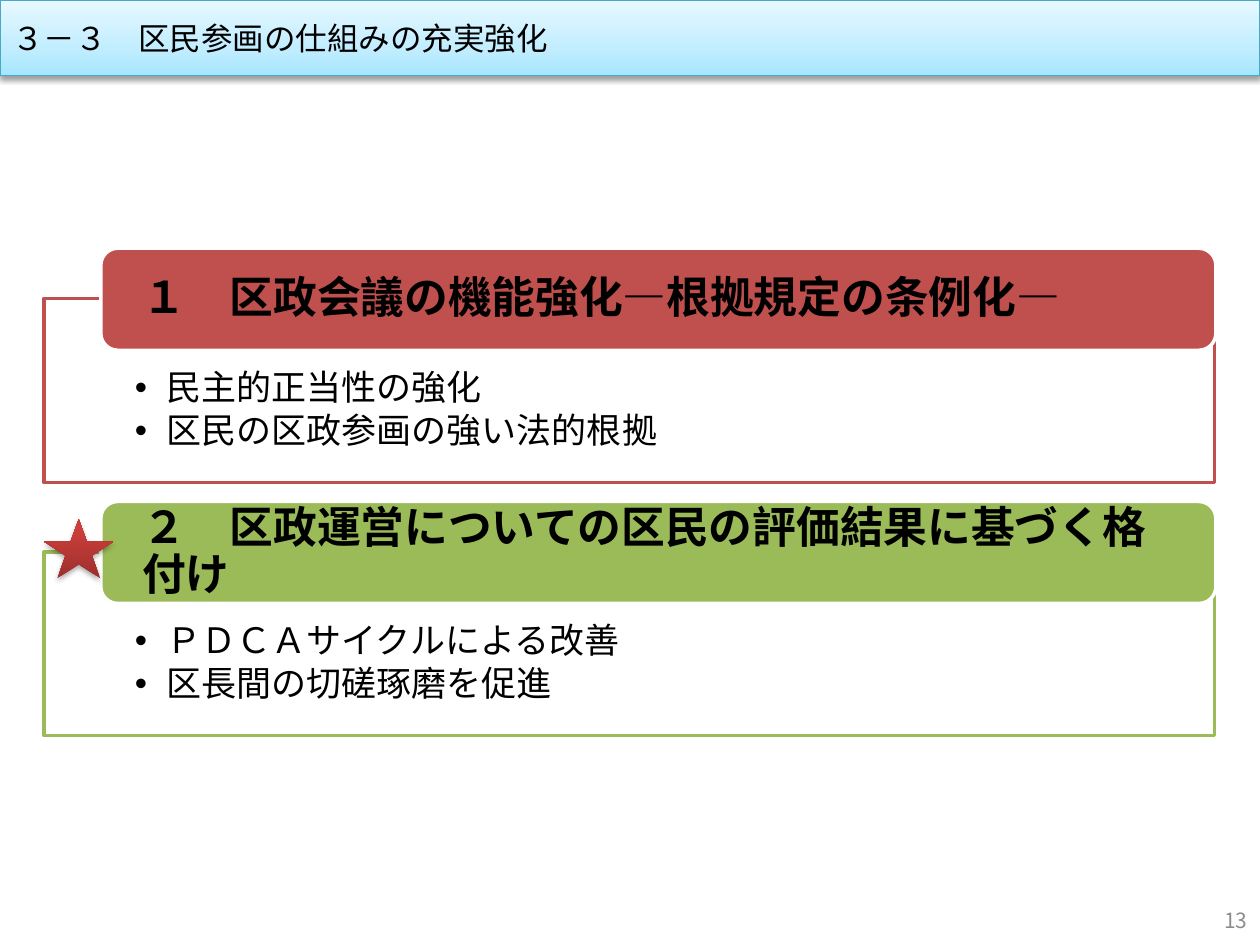
from lxml import etree
from pptx import Presentation
from pptx.dml.color import RGBColor
from pptx.enum.shapes import MSO_SHAPE
from pptx.enum.text import MSO_ANCHOR, PP_ALIGN
from pptx.oxml.ns import qn
from pptx.util import Inches, Pt

RECT, ROUND, STAR = MSO_SHAPE.RECTANGLE, MSO_SHAPE.ROUNDED_RECTANGLE, MSO_SHAPE.STAR_5_POINT
TOP, MIDDLE = MSO_ANCHOR.TOP, MSO_ANCHOR.MIDDLE
LEFT, RIGHT = PP_ALIGN.LEFT, PP_ALIGN.RIGHT
W, H = 10, 7.5
PANEL_X, PANEL_W, PANEL_H = 0.35, 9.29, 1.46
FIRST_Y, PITCH = 2.37, 2.01
BULLET_INDENT = 0.25
SECTIONS = [
    ("１　区政会議の機能強化―根拠規定の条例化―", "C0504D",
     ["民主的正当性の強化", "区民の区政参画の強い法的根拠"]),
    ("２　区政運営についての区民の評価結果に基づく格付け", "9BBB59",
     ["ＰＤＣＡサイクルによる改善", "区長間の切磋琢磨を促進"]),
]


def rgb(color):
    return RGBColor.from_string(color)


def sub(parent, tag, **attrs):
    return etree.SubElement(parent, qn(tag), {k: str(v) for k, v in attrs.items()})


def add_text(sp, lines, size, color="000000", font="Calibri", bold=False, align=LEFT,
             anchor=MIDDLE, insets=(0.1, 0.05, 0.1, 0.05), spacing=1, after=0, bullet=False):
    tf = sp.text_frame
    tf.word_wrap = True
    tf.vertical_anchor = anchor
    tf.margin_left, tf.margin_top, tf.margin_right, tf.margin_bottom = map(Inches, insets)
    for i, line in enumerate(lines):
        p = tf.add_paragraph() if i else tf.paragraphs[0]
        p.alignment, p.line_spacing, p.space_after = align, spacing, Pt(after)
        if bullet:
            pPr = p._p.get_or_add_pPr()
            pPr.set("marL", str(Inches(BULLET_INDENT)))
            pPr.set("indent", str(-Inches(BULLET_INDENT)))
            sub(pPr, "a:buFont", typeface="Arial")
            sub(pPr, "a:buChar", char="•")
        r = p.add_run()
        r.text = line
        r.font.size, r.font.name, r.font.bold = Pt(size), font, bold
        r.font.color.rgb = rgb(color)


def add_box(s, kind, box, fill=None, line=None, width=2, alpha=None):
    sp = s.shapes.add_shape(kind, *map(Inches, box))
    if fill:
        sp.fill.solid()
        sp.fill.fore_color.rgb = rgb(fill)
    if alpha:
        sub(sp.fill._xPr.find(".//" + qn("a:srgbClr")), "a:alpha", val=alpha * 1000)
    if line:
        sp.line.color.rgb = rgb(line)
        sp.line.width = Pt(width)
    else:
        sp.line.fill.background()
    sp.shadow.inherit = False
    return sp


def add_glossy(s, kind, box, stops, shadow_alpha, distance, **kw):
    """Shape with an upward gradient and a soft shadow below it."""
    sp = add_box(s, kind, box, **kw)
    sp.fill.gradient()
    sp.fill.gradient_angle = 90
    gs_list = sp._element.spPr.find(".//" + qn("a:gsLst"))
    for gs in list(gs_list):
        gs_list.remove(gs)
    for pos, color in stops:
        sub(sub(gs_list, "a:gs", pos=pos * 1000), "a:srgbClr", val=color)
    effects = sp._element.spPr.find(qn("a:effectLst"))
    shadow = sub(effects, "a:outerShdw", blurRad=Pt(3.1), dist=Pt(distance),
                 dir=90 * 60000, rotWithShape=0)
    sub(sub(shadow, "a:srgbClr", val="000000"), "a:alpha", val=shadow_alpha * 1000)
    return sp


def add_title(s, box, text):
    sp = add_glossy(s, RECT, box, [(0, "A7E6FF"), (35, "C1EDFF"), (100, "E7F8FF")],
                    38, 1.6, line="46AAC5", width=0.75)
    add_text(sp, [text], 18)


def add_section(s, box, heading, color, bullets):
    """Outlined panel with a heading bar across its top edge."""
    x, y, w, h = box
    panel = add_box(s, RECT, box, "FFFFFF", color, alpha=90)
    add_text(panel, bullets, 20, anchor=TOP, insets=(0.72, 0.57, 0.72, 0.16),
             spacing=0.9, after=3, bullet=True)
    bar = add_box(s, ROUND, (x + 0.45, y - 0.4, w - 0.44, 0.81), color, "FFFFFF")
    add_text(bar, [heading], 25, bold=True, insets=(0.29, 0.04, 0.29, 0.04), spacing=0.9)


def add_page_number(s, box, number):
    sp = s.shapes.add_textbox(*map(Inches, box))
    add_text(sp, [number], 12, color="8C8C8C", font="Noto Sans CJK JP", align=RIGHT)


def main():
    prs = Presentation()
    prs.slide_width, prs.slide_height = Inches(W), Inches(H)
    s = prs.slides.add_slide(prs.slide_layouts[6])
    add_page_number(s, (W - 2.33, H - 0.4, 2.33, 0.4), "13")
    add_title(s, (0, 0, W, 0.6), "３－３　区民参画の仕組みの充実強化")
    for i, section in enumerate(SECTIONS):
        add_section(s, (PANEL_X, FIRST_Y + i * PITCH, PANEL_W, PANEL_H), *section)
    add_glossy(s, STAR, (PANEL_X, FIRST_Y + PITCH - 0.26, 0.55, 0.47),
               [(0, "9C2F2D"), (80, "CB3E3A"), (100, "CE3B37")], 35, 1.8)
    prs.save("out.pptx")


if __name__ == "__main__":
    main()
